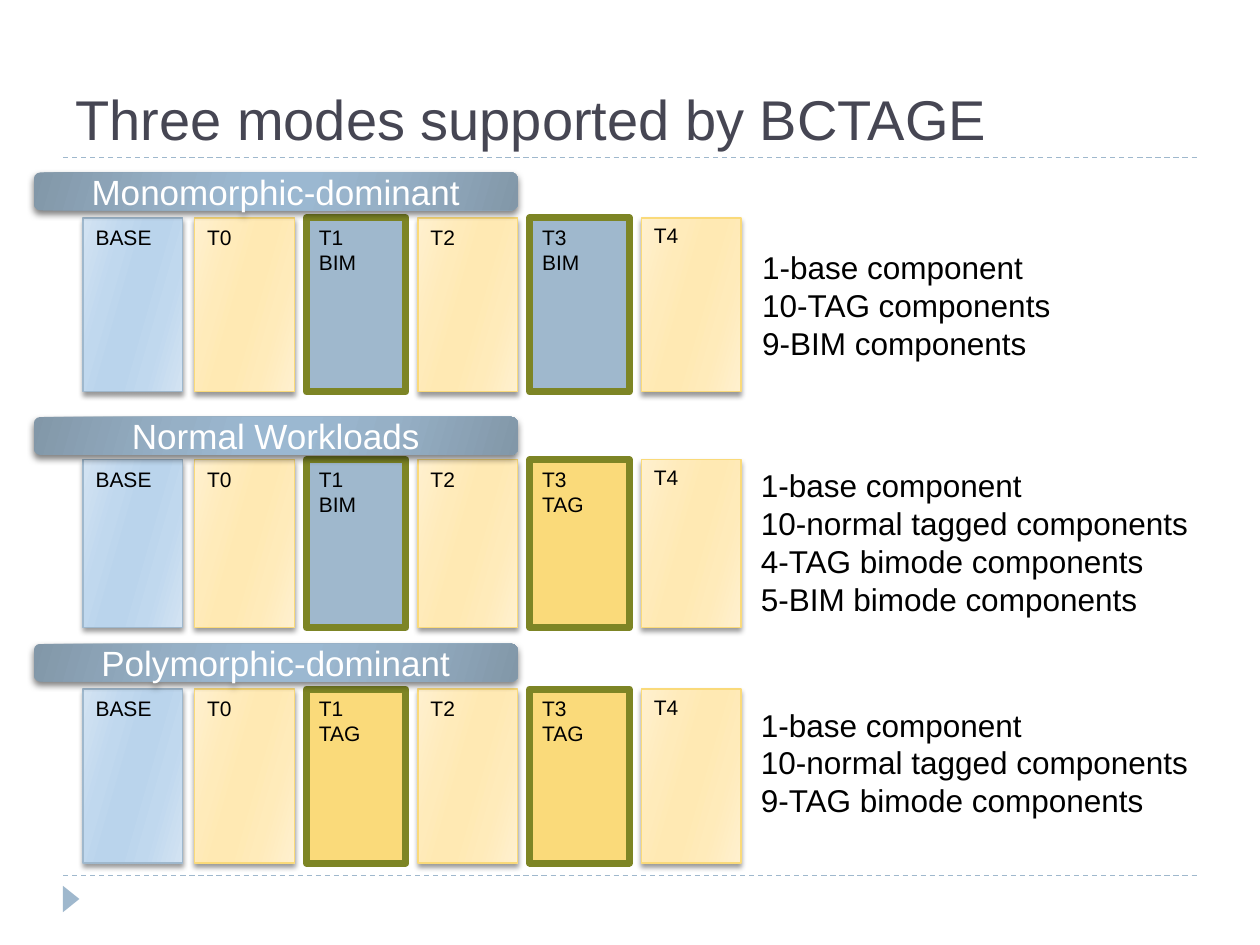
from dataclasses import dataclass

from pptx import Presentation
from pptx.dml.color import RGBColor
from pptx.enum import dml, shapes, text
from pptx.oxml import parse_xml
from pptx.oxml import ns
from pptx.util import Pt


@dataclass(frozen=True)
class Theme:
    font: str = "Arial"
    title_size: int = 32
    bar_size: int = 20
    summary_size: int = 18
    label_size: int = 12
    title: str = "464653"
    ink: str = "000000"
    white: str = "FFFFFF"
    blue: str = "9FB8CD"
    yellow: str = "FADA7A"
    olive: str = "7D8525"
    blue_shades: tuple = ("D3E3F2", "C0D8EE", "BAD4EC")
    yellow_shades: tuple = ("FFF0CF", "FFEBBA", "FFE9B3")
    bar_shades: tuple = ("8297A8", "96B0C6", "9BB8D1")


@dataclass(frozen=True)
class Mode:
    name: str
    bar_top: float
    top: float
    height: float
    t1: str
    t3: str
    summary: tuple
    summary_box: tuple


THEME = Theme()
BANK_LEFT, BANK_PITCH, BANK_WIDTH = 47.5, 63.8, 56.9
MODES = (
    Mode("Monomorphic-dominant", 98.6, 124.5, 99.4, "BIM", "BIM",
         ("1-base component", "10-TAG components", "9-BIM components"),
         (428.4, 138.2, 190.8, 72.7)),
    Mode("Normal Workloads", 238.3, 262.8, 95.8, "BIM", "TAG",
         ("1-base component", "10-normal tagged components",
          "4-TAG bimode components", "5-BIM bimode components"),
         (427.7, 262.8, 276.5, 94.3)),
    Mode("Polymorphic-dominant", 367.9, 393.8, 99.4, "TAG", "TAG",
         ("1-base component", "10-normal tagged components",
          "9-TAG bimode components"),
         (427.7, 399.6, 276.5, 72.7)),
)


def rgb(value):
    return RGBColor.from_string(value)


def write(frame, lines, size, color, align=text.PP_ALIGN.LEFT):
    frame.text = "\n".join(lines)
    for paragraph in frame.paragraphs:
        paragraph.alignment = align
        for run in paragraph.runs:
            run.font.name = THEME.font
            run.font.size = Pt(size)
            run.font.color.rgb = rgb(color)


def add_text(slide, box, lines, size, color=THEME.ink, grow=True):
    frame = slide.shapes.add_textbox(*map(Pt, box)).text_frame
    frame.word_wrap = True
    if grow:
        frame.auto_size = text.MSO_AUTO_SIZE.SHAPE_TO_FIT_TEXT
    else:
        frame.vertical_anchor = text.MSO_ANCHOR.BOTTOM
    write(frame, lines, size, color)


def add_block(slide, preset, box, fill=None, line=None, line_width=0.75):
    block = slide.shapes.add_shape(preset, *map(Pt, box))
    block.shadow.inherit = False
    if fill:
        block.fill.solid()
        block.fill.fore_color.rgb = rgb(fill)
    if line:
        block.line.color.rgb = rgb(line)
        block.line.width = Pt(line_width)
    else:
        block.line.fill.background()
    return block


def shade(block, shades):
    outer, middle, inner = shades
    stops = ((0, outer), (30, middle), (45, inner),
             (55, inner), (73, middle), (100, outer))
    block.fill.gradient()
    block.fill.gradient_angle = 344
    stop_list = block.element.spPr.find(ns.qn("a:gradFill")).find(ns.qn("a:gsLst"))
    for stop in list(stop_list):
        stop_list.remove(stop)
    for position, color in stops:
        stop_list.append(parse_xml(
            f'<a:gs {ns.nsdecls("a")} pos="{position * 1000}">'
            f'<a:srgbClr val="{color}"/></a:gs>'))


def cast_shadow(block, alpha, blur, distance):
    block.element.spPr.find(ns.qn("a:effectLst")).append(parse_xml(
        f'<a:outerShdw {ns.nsdecls("a")} blurRad="{Pt(blur)}" dist="{Pt(distance)}" '
        f'dir="5400000" rotWithShape="0"><a:srgbClr val="{THEME.ink}">'
        f'<a:alpha val="{alpha * 1000}"/></a:srgbClr></a:outerShdw>'))


def add_rule(slide, top):
    rule = slide.shapes.add_connector(
        shapes.MSO_CONNECTOR.STRAIGHT, Pt(36), Pt(top), Pt(684), Pt(top))
    rule.line.color.rgb = rgb(THEME.blue)
    rule.line.width = Pt(0.75)
    rule.line.dash_style = dml.MSO_LINE.DASH
    rule.element.spPr.append(parse_xml(f'<a:effectLst {ns.nsdecls("a")}/>'))


def add_bank(slide, column, mode, name, kind=None):
    left = BANK_LEFT + column * BANK_PITCH
    box = (left, mode.top, BANK_WIDTH, mode.height)
    rectangle = shapes.MSO_SHAPE.RECTANGLE
    if kind:
        fill = THEME.blue if kind == "BIM" else THEME.yellow
        add_block(slide, rectangle, box, fill, THEME.olive, 4)
    else:
        is_base = name == "BASE"
        bank = add_block(slide, rectangle, box,
                         line=THEME.blue if is_base else THEME.yellow)
        shade(bank, THEME.blue_shades if is_base else THEME.yellow_shades)
        cast_shadow(bank, 40, 3, 2)
    lines = [name, kind] if kind else [name]
    label_top = mode.top - (0.7 if name == "T4" else 0)
    add_text(slide, (left, label_top, BANK_WIDTH, 36 if kind else 21.6),
             lines, THEME.label_size)


def add_mode(slide, mode):
    banks = (("BASE",), ("T0",), ("T1", mode.t1), ("T2",), ("T3", mode.t3), ("T4",))
    for column, bank in enumerate(banks):
        add_bank(slide, column, mode, *bank)
    bar = add_block(slide, shapes.MSO_SHAPE.ROUNDED_RECTANGLE,
                    (19.4, mode.bar_top, 276.5, 21.6))
    shade(bar, THEME.bar_shades)
    cast_shadow(bar, 50, 4, 2)
    bar.text_frame.vertical_anchor = text.MSO_ANCHOR.MIDDLE
    write(bar.text_frame, [mode.name], THEME.bar_size, THEME.white,
          text.PP_ALIGN.CENTER)
    add_text(slide, mode.summary_box, mode.summary, THEME.summary_size)


def main():
    deck = Presentation()
    deck.slide_width, deck.slide_height = Pt(720), Pt(540)
    slide = deck.slides.add_slide(deck.slide_layouts[6])
    for top in (500.4, 90):
        add_rule(slide, top)
    marker = add_block(slide, shapes.MSO_SHAPE.ISOSCELES_TRIANGLE,
                       (33.1, 509, 15.1, 9.4), THEME.blue)
    marker.rotation = 90
    add_text(slide, (36, 12.2, 648, 77.8), ["Three modes supported by BCTAGE"],
             THEME.title_size, THEME.title, grow=False)
    for mode in MODES:
        add_mode(slide, mode)
    deck.save("out.pptx")


if __name__ == "__main__":
    main()
